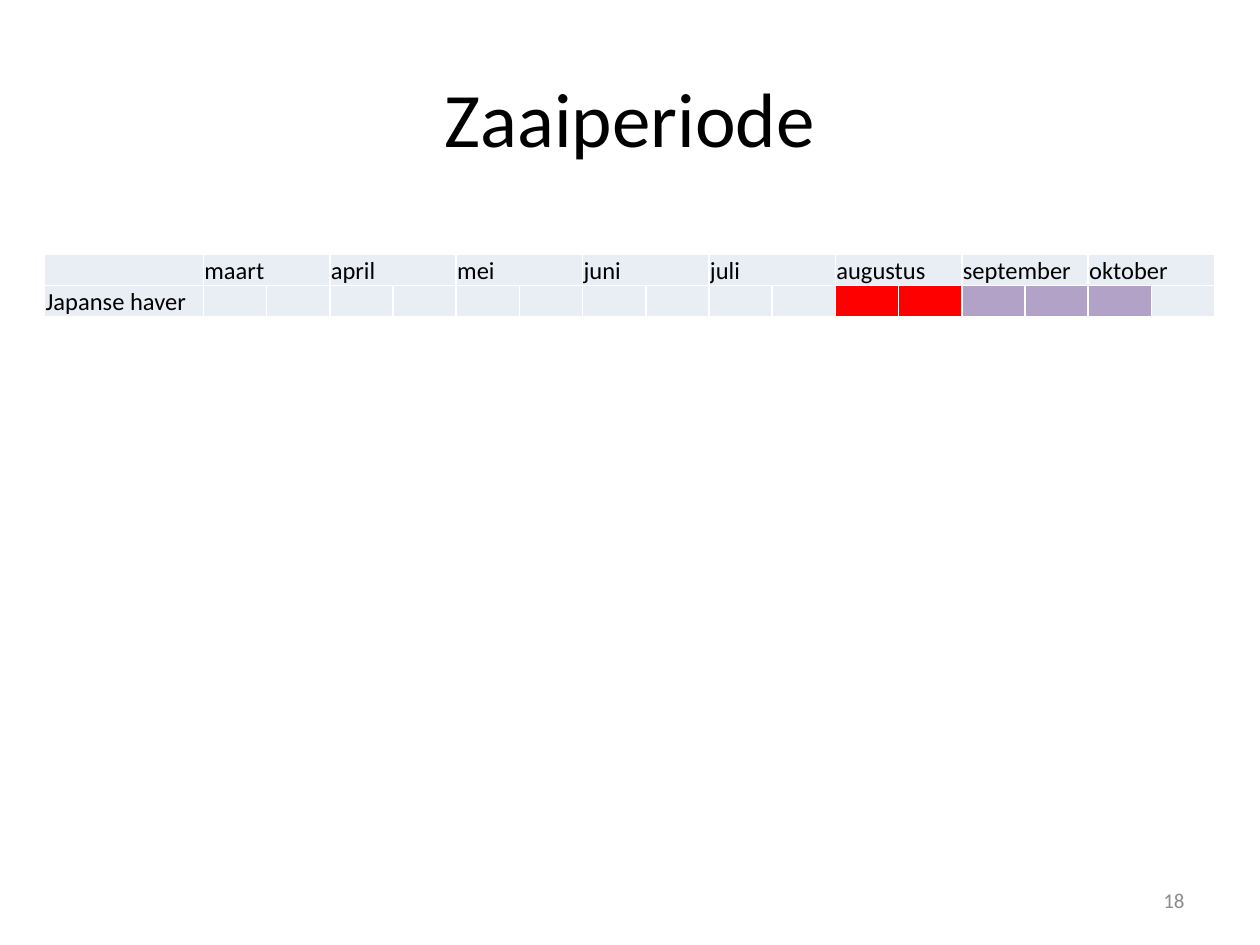
from dataclasses import dataclass

from lxml import etree
from pptx import Presentation
from pptx.dml.color import RGBColor
from pptx.enum import text as t
from pptx.oxml import ns
from pptx.util import Cm, Pt


@dataclass(frozen=True)
class Theme:
    font: str = "Calibri"
    ink: str = "000000"
    gray: str = "8C8C8C"
    pale: str = "E9EDF4"
    red: str = "FF0000"
    lilac: str = "B3A2C7"
    edge: str = "FFFFFF"
    head: int = 44
    body: int = 14
    foot: int = 12


THEME = Theme()
MONTHS = ["maart", "april", "mei", "juni", "juli",
          "augustus", "september", "oktober"]
CROP = "Japanse haver"
# Fill of each half month, from early March to late October
HALVES = [THEME.pale] * 10 + [THEME.red] * 2 + [THEME.lilac] * 3 + [THEME.pale]


def write(frame, text, size=THEME.body, color=THEME.ink,
          align=t.PP_ALIGN.LEFT, anchor=t.MSO_ANCHOR.MIDDLE):
    frame.word_wrap = True
    frame.vertical_anchor = anchor
    para = frame.paragraphs[0]
    para.alignment = align
    run = para.add_run()
    run.text = text
    run.font.name = THEME.font
    run.font.size = Pt(size)
    run.font.color.rgb = RGBColor.from_string(color)


def add_edges(cell):
    """Draw a thin line on all four sides; call before filling the cell."""
    props = cell._tc.get_or_add_tcPr()
    for side in ("lnL", "lnR", "lnT", "lnB"):
        line = etree.SubElement(props, ns.qn(f"a:{side}"), w=str(Pt(1)))
        fill = etree.SubElement(line, ns.qn("a:solidFill"))
        etree.SubElement(fill, ns.qn("a:srgbClr"), val=THEME.edge)


def style_cell(cell, fill, text=""):
    cell.margin_left = cell.margin_right = cell.margin_top = Cm(0.02)
    cell.margin_bottom = 0
    cell.vertical_anchor = t.MSO_ANCHOR.BOTTOM
    add_edges(cell)
    cell.fill.solid()
    cell.fill.fore_color.rgb = RGBColor.from_string(fill)
    if text:
        write(cell.text_frame, text, anchor=None)
    else:
        # The end mark keeps an empty cell from growing its row
        para = cell.text_frame.paragraphs[0]._p
        etree.SubElement(para, ns.qn("a:endParaRPr"), sz=str(THEME.body * 100))


def add_title(slide, text):
    title = slide.shapes.title
    title.left, title.top = Cm(1.27), Cm(0.76)
    title.width, title.height = Cm(22.86), Cm(3.18)
    write(title.text_frame, text, size=THEME.head, align=t.PP_ALIGN.CENTER)


def add_periods(slide):
    count = len(HALVES)
    first, half = Cm(3.2), Cm(1.275)
    frame = slide.shapes.add_table(2, count + 1, Cm(0.9), Cm(5.13),
                                   first + count * half, Cm(1.26))
    table = frame.table
    table.first_row = table.horz_banding = False
    for i, col in enumerate(table.columns):
        col.width = half if i else first
    for row in table.rows:
        row.height = Cm(0.63)

    names = {1 + 2 * i: name for i, name in enumerate(MONTHS)}
    for i, fill in enumerate([THEME.pale] + HALVES):
        style_cell(table.cell(0, i), THEME.pale, names.get(i, ""))
        style_cell(table.cell(1, i), fill, "" if i else CROP)
    for i in names:
        table.cell(0, i).merge(table.cell(0, i + 1))


def add_number(slide, text):
    box = slide.shapes.add_textbox(Cm(18.2), Cm(17.65), Cm(5.93), Cm(1.01))
    write(box.text_frame, text, size=THEME.foot, color=THEME.gray,
          align=t.PP_ALIGN.RIGHT)


def main():
    deck = Presentation()
    deck.slide_width, deck.slide_height = Cm(25.4), Cm(19.05)
    slide = deck.slides.add_slide(deck.slide_layouts[5])
    add_title(slide, "Zaaiperiode")
    add_periods(slide)
    add_number(slide, "18")
    deck.save("out.pptx")


if __name__ == "__main__":
    main()
